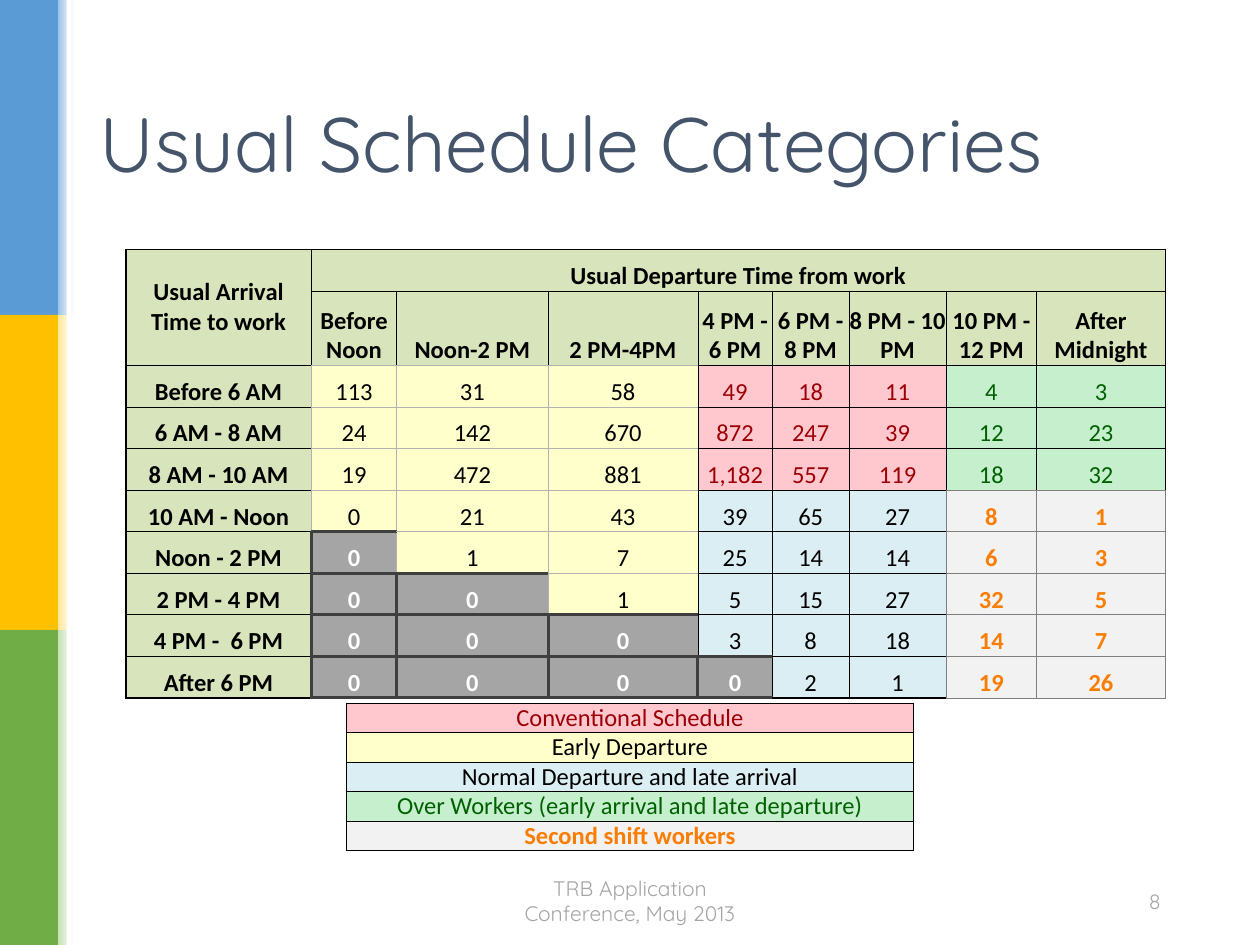
"""Build the slide of usual work schedule categories."""
from typing import NamedTuple

from lxml import etree
from pptx import Presentation
from pptx.dml.color import RGBColor
from pptx.enum import shapes, text
from pptx.oxml import ns
from pptx.util import Inches, Pt


class Category(NamedTuple):
    fill: str
    ink: str = "000000"
    bold: bool = False
    edge: str = "000000"
    edge_width: float = 0.5
    label: str = ""


class Band(NamedTuple):
    solid: str
    fade: str


class Caption(NamedTuple):
    wording: str
    left: float
    top: float
    width: float
    height: float
    size: int
    ink: str
    align: text.PP_ALIGN


CATEGORIES = {
    "C": Category("FFC7CE", "9C0006", label="Conventional Schedule"),
    "E": Category("FFFFCC", edge="B2B2B2", label="Early Departure"),
    "N": Category("DBEEF3", label="Normal Departure and late arrival"),
    "O": Category("C6EFCE", "006100", label="Over Workers (early arrival and late departure)"),
    "S": Category("F2F2F2", "FA7D00", True, "7F7F7F", label="Second shift workers"),
    "H": Category("D7E4BC", bold=True),
    "X": Category("A5A5A5", "FFFFFF", True, "3F3F3F", 2),
}
LEGEND_ORDER = ["C", "E", "N", "O", "S"]
BANDS = [Band("5B9BD5", "9DC3E6"), Band("FFC000", "FFE699"), Band("70AD47", "C5E0B4")]
CAPTIONS = [
    Caption("Usual Schedule Categories", 0.69, 0.4, 8.62, 1.45, 44, "44546A", text.PP_ALIGN.LEFT),
    Caption("TRB Application Conference, May 2013", 3.81, 6.95, 2.38, 0.4, 12, "A5A5A5",
            text.PP_ALIGN.CENTER),
    Caption("8", 6.62, 6.95, 2.69, 0.4, 12, "A5A5A5", text.PP_ALIGN.RIGHT),
]
COLUMN_WIDTHS = [1.47, 0.68, 1.2, 1.19, 0.59, 0.61, 0.77, 0.72, 1.02]
ROW_HEIGHTS = [0.33, 0.59] + [0.33] * 8
SCHEDULE = [
    ["Usual Arrival Time to work", "Usual Departure Time from work"] + [""] * 7,
    ["", "Before Noon", "Noon-2 PM", "2 PM-4PM", "4 PM - 6 PM", "6 PM - 8 PM",
     "8 PM - 10 PM", "10 PM - 12 PM", "After Midnight"],
    ["Before 6 AM", "113", "31", "58", "49", "18", "11", "4", "3"],
    ["6 AM - 8 AM", "24", "142", "670", "872", "247", "39", "12", "23"],
    ["8 AM - 10 AM", "19", "472", "881", "1,182", "557", "119", "18", "32"],
    ["10 AM - Noon", "0", "21", "43", "39", "65", "27", "8", "1"],
    ["Noon - 2 PM", "0", "1", "7", "25", "14", "14", "6", "3"],
    ["2 PM - 4 PM", "0", "0", "1", "5", "15", "27", "32", "5"],
    ["4 PM -  6 PM", "0", "0", "0", "3", "8", "18", "14", "7"],
    ["After 6 PM", "0", "0", "0", "0", "2", "1", "19", "26"],
]
CATEGORY_MAP = ["HHHHHHHHH"] * 2 + ["HEEECCCOO"] * 3 + [
    "HEEENNNSS", "HXEENNNSS", "HXXENNNSS", "HXXXNNNSS", "HXXXXNNSS"]


def colour(value: str) -> RGBColor:
    """Turn a hex string into a colour."""
    return RGBColor.from_string(value)


def style_text(paragraph, font_name: str, size: float, ink: str, align, bold: bool = False) -> None:
    """Set the font and alignment of a paragraph."""
    paragraph.alignment = align
    font = paragraph.font
    font.name, font.size, font.bold = font_name, Pt(size), bold
    font.color.rgb = colour(ink)


def add_bar(slide, left: float, top: float, width: float, height: float,
            start: str, end: str = "") -> None:
    """Draw a borderless bar, fading rightwards when an end colour is given."""
    bar = slide.shapes.add_shape(shapes.MSO_SHAPE.RECTANGLE, Inches(left), Inches(top),
                                 Inches(width), Inches(height))
    bar.shadow.inherit = False
    bar.line.fill.background()
    if end:
        bar.fill.gradient()
        bar.fill.gradient_angle = 0
        for stop, value in zip(bar.fill.gradient_stops, (start, end)):
            stop.color.rgb = colour(value)
    else:
        bar.fill.solid()
        bar.fill.fore_color.rgb = colour(start)


def add_caption(slide, caption: Caption) -> None:
    """Place a vertically centred line of text."""
    box = slide.shapes.add_textbox(Inches(caption.left), Inches(caption.top),
                                   Inches(caption.width), Inches(caption.height))
    frame = box.text_frame
    frame.word_wrap = True
    frame.vertical_anchor = text.MSO_ANCHOR.MIDDLE
    frame.text = caption.wording
    style_text(frame.paragraphs[0], "Quicksand", caption.size, caption.ink, caption.align)


def add_grid(slide, left: float, top: float, widths: list[float], heights: list[float]):
    """Add an unbanded table with the given column widths and row heights."""
    table = slide.shapes.add_table(len(heights), len(widths), Inches(left), Inches(top),
                                   Inches(sum(widths)), Inches(sum(heights))).table
    table.first_row = table.horz_banding = False
    for column, width in zip(table.columns, widths):
        column.width = Inches(width)
    for row, height in zip(table.rows, heights):
        row.height = Inches(height)
    return table


def set_borders(cell, edges: list[tuple[str, float]]) -> None:
    """Draw the left, right, top and bottom borders of a cell."""
    properties = cell._tc.get_or_add_tcPr()
    for position, (side, (value, width)) in enumerate(zip("LRTB", edges)):
        line = etree.Element(ns.qn(f"a:ln{side}"), w=str(Pt(width)))
        fill = etree.SubElement(line, ns.qn("a:solidFill"))
        etree.SubElement(fill, ns.qn("a:srgbClr"), val=value)
        properties.insert(position, line)


def fill_cell(cell, wording: str, category: Category, edges: list[tuple[str, float]],
              anchor=text.MSO_ANCHOR.BOTTOM) -> None:
    """Write a cell in the style of its category."""
    cell.text = wording
    cell.margin_left = cell.margin_right = cell.margin_top = cell.margin_bottom = 0
    cell.vertical_anchor = anchor
    cell.fill.solid()
    cell.fill.fore_color.rgb = colour(category.fill)
    style_text(cell.text_frame.paragraphs[0], "Calibri", 14, category.ink,
               text.PP_ALIGN.CENTER, category.bold)
    set_borders(cell, edges)


def schedule_edge(row: int, column: int, owner: Category) -> tuple[str, float]:
    """Give the edge shared with the cell to the right or below, or the outer edge."""
    if row < len(CATEGORY_MAP) and column < len(COLUMN_WIDTHS):
        owner = CATEGORIES[CATEGORY_MAP[row][column]]
    elif owner.edge == "000000":
        return owner.edge, 1
    return owner.edge, owner.edge_width


def add_schedule(slide) -> None:
    """Draw the table of arrival against departure times."""
    table = add_grid(slide, 1, 1.98, COLUMN_WIDTHS, ROW_HEIGHTS)
    for row, wordings in enumerate(SCHEDULE):
        for column, wording in enumerate(wordings):
            category = CATEGORIES[CATEGORY_MAP[row][column]]
            edges = [
                (category.edge, category.edge_width if column else 1),
                schedule_edge(row, column + 1, category),
                (category.edge, category.edge_width if row else 1),
                schedule_edge(row + 1, column, category),
            ]
            is_corner = row == column == 0
            anchor = text.MSO_ANCHOR.MIDDLE if is_corner else text.MSO_ANCHOR.BOTTOM
            fill_cell(table.cell(row, column), wording, category, edges, anchor)
    table.cell(0, 0).merge(table.cell(1, 0))
    table.cell(0, 1).merge(table.cell(0, len(COLUMN_WIDTHS) - 1))


def add_legend(slide) -> None:
    """Draw the list of schedule categories."""
    table = add_grid(slide, 2.75, 5.58, [4.5], [0.23] * len(LEGEND_ORDER))
    for row, key in enumerate(LEGEND_ORDER):
        category = CATEGORIES[key]
        fill_cell(table.cell(row, 0), category.label, category, [("000000", 0.5)] * 4)


def main() -> None:
    """Build and save the slide."""
    deck = Presentation()
    deck.slide_width, deck.slide_height = Inches(10), Inches(7.5)
    slide = deck.slides.add_slide(deck.slide_layouts[6])
    for index, band in enumerate(BANDS):
        add_bar(slide, 0, 2.5 * index, 0.47, 2.5, band.solid)
        add_bar(slide, 0.46, 2.5 * index, 0.13, 2.5, band.fade, "FFFFFF")
    add_bar(slide, 0.53, 0, 0.04, 7.5, "FFFFFF")
    for caption in CAPTIONS:
        add_caption(slide, caption)
    add_schedule(slide)
    add_legend(slide)
    deck.save("out.pptx")


if __name__ == "__main__":
    main()
